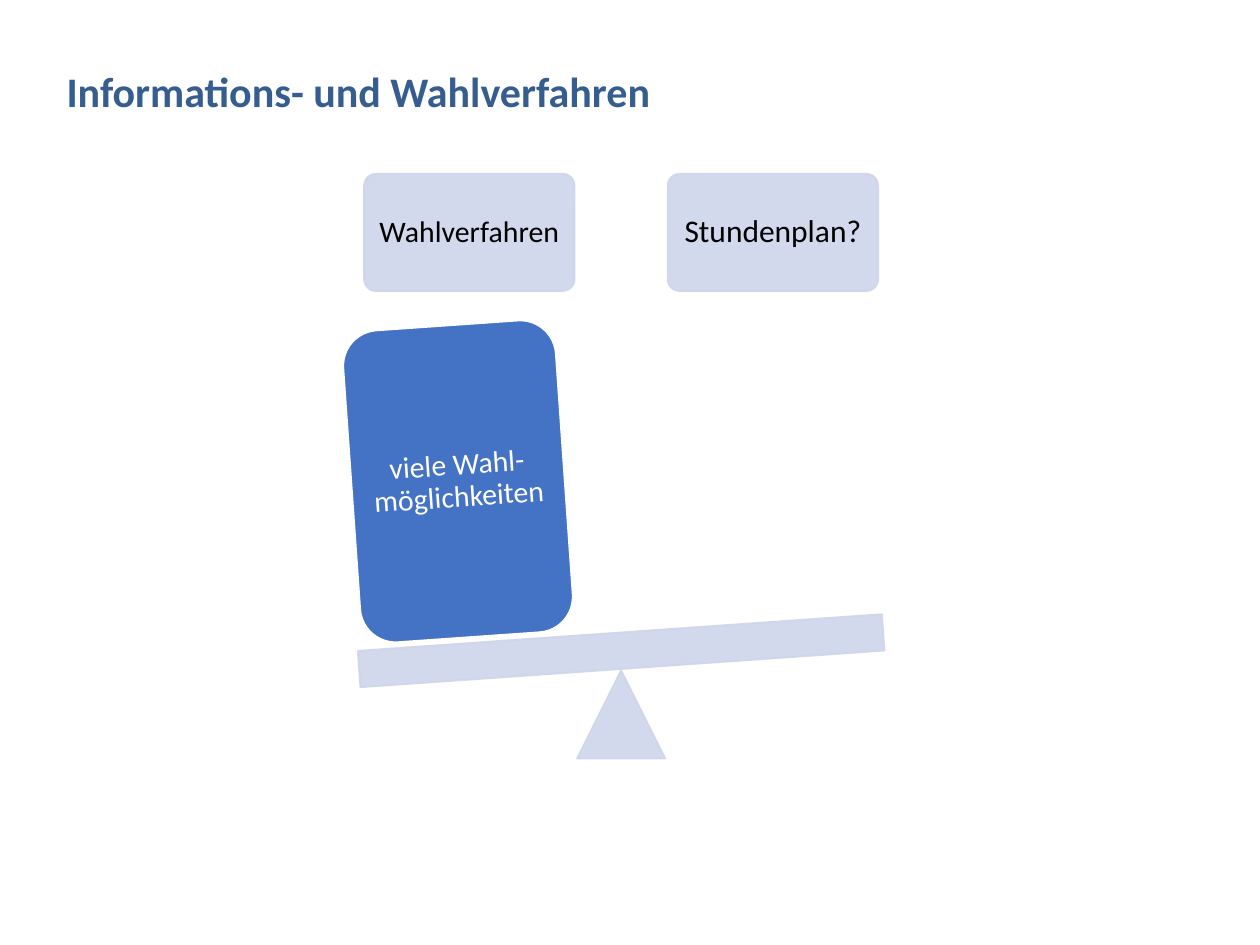
from lxml.etree import SubElement
from pptx import Presentation
from pptx.dml.color import RGBColor
from pptx.enum.shapes import MSO_SHAPE
from pptx.enum.text import MSO_ANCHOR, PP_ALIGN
from pptx.oxml.ns import qn
from pptx.util import Inches, Pt

TITLE = "Informations- und Wahlverfahren"
PANS = [("Wahlverfahren", 17), ("Stundenplan?", 18)]
WEIGHT = ("viele Wahl-möglichkeiten", 17)
PALE, BLUE, NAVY, WHITE, BLACK = "CFD5EA", "4472C4", "355D90", "FFFFFF", "000000"
FONT = "Calibri"
TILT = -4
CENTER = 4.93
PAN_W, PAN_H, PAN_TOP, PAN_PITCH = 1.67, 0.93, 1.38, 2.41
BEAM_W, BEAM_H, BEAM_TOP = 4.17, 0.29, 5.02
PIVOT, PIVOT_TOP = 0.7, 5.32


def paint(color_format, color, alpha):
    """Set a solid colour and its opacity in percent."""
    color_format.solid()
    color_format.fore_color.rgb = RGBColor.from_string(color)
    if alpha < 100:
        for clr in color_format._xPr.iter(qn("a:srgbClr")):
            if clr.getparent().getparent() is color_format._xPr:
                SubElement(clr, qn("a:alpha"), val=str(alpha * 1000))


def add_part(slide, kind, box, fill=PALE, line=PALE, alpha=90, tilt=0, corner=None):
    """Add one filled part of the balance."""
    part = slide.shapes.add_shape(kind, *map(Inches, box))
    part.shadow.inherit = False
    part.rotation = tilt
    if corner:
        part.adjustments[0] = corner
    paint(part.fill, fill, alpha)
    paint(part.line.fill, line, alpha)
    part.line.width = Pt(1)
    return part


def write(holder, text, size, color, bold=False):
    """Put one formatted paragraph into a shape and return it."""
    holder.text_frame.word_wrap = True
    paragraph = holder.text_frame.paragraphs[0]
    paragraph.text = text
    font = paragraph.runs[0].font
    font.name, font.size, font.bold = FONT, Pt(size), bold
    font.color.rgb = RGBColor.from_string(color)
    return paragraph


def label(part, text, size, color):
    """Centre a label inside a part."""
    frame = part.text_frame
    frame.margin_left = frame.margin_right = Inches(0.07)
    frame.margin_top = frame.margin_bottom = Inches(0.07)
    frame.vertical_anchor = MSO_ANCHOR.MIDDLE
    paragraph = write(part, text, size, color)
    paragraph.alignment = PP_ALIGN.CENTER
    paragraph.line_spacing = 0.9


def main():
    """Build the slide."""
    deck = Presentation()
    deck.slide_width, deck.slide_height = Inches(10), Inches(7.5)
    slide = deck.slides.add_slide(deck.slide_layouts[6])

    title = slide.shapes.add_textbox(*map(Inches, (0.43, 0.47, 9.37, 0.87)))
    write(title, TITLE, 24, NAVY, bold=True)

    for side, (text, size) in zip((-0.5, 0.5), PANS):
        left = CENTER + side * PAN_PITCH - PAN_W / 2
        pan = add_part(slide, MSO_SHAPE.ROUNDED_RECTANGLE,
                       (left, PAN_TOP, PAN_W, PAN_H), corner=0.1)
        label(pan, text, size, BLACK)

    add_part(slide, MSO_SHAPE.ISOSCELES_TRIANGLE,
             (CENTER - PIVOT / 2, PIVOT_TOP, PIVOT, PIVOT))
    add_part(slide, MSO_SHAPE.RECTANGLE,
             (CENTER - BEAM_W / 2, BEAM_TOP, BEAM_W, BEAM_H), tilt=TILT)
    weight = add_part(slide, MSO_SHAPE.ROUNDED_RECTANGLE, (2.79, 2.58, 1.69, 2.48),
                      BLUE, WHITE, alpha=100, tilt=TILT)
    label(weight, *WEIGHT, WHITE)

    deck.save("out.pptx")


if __name__ == "__main__":
    main()
